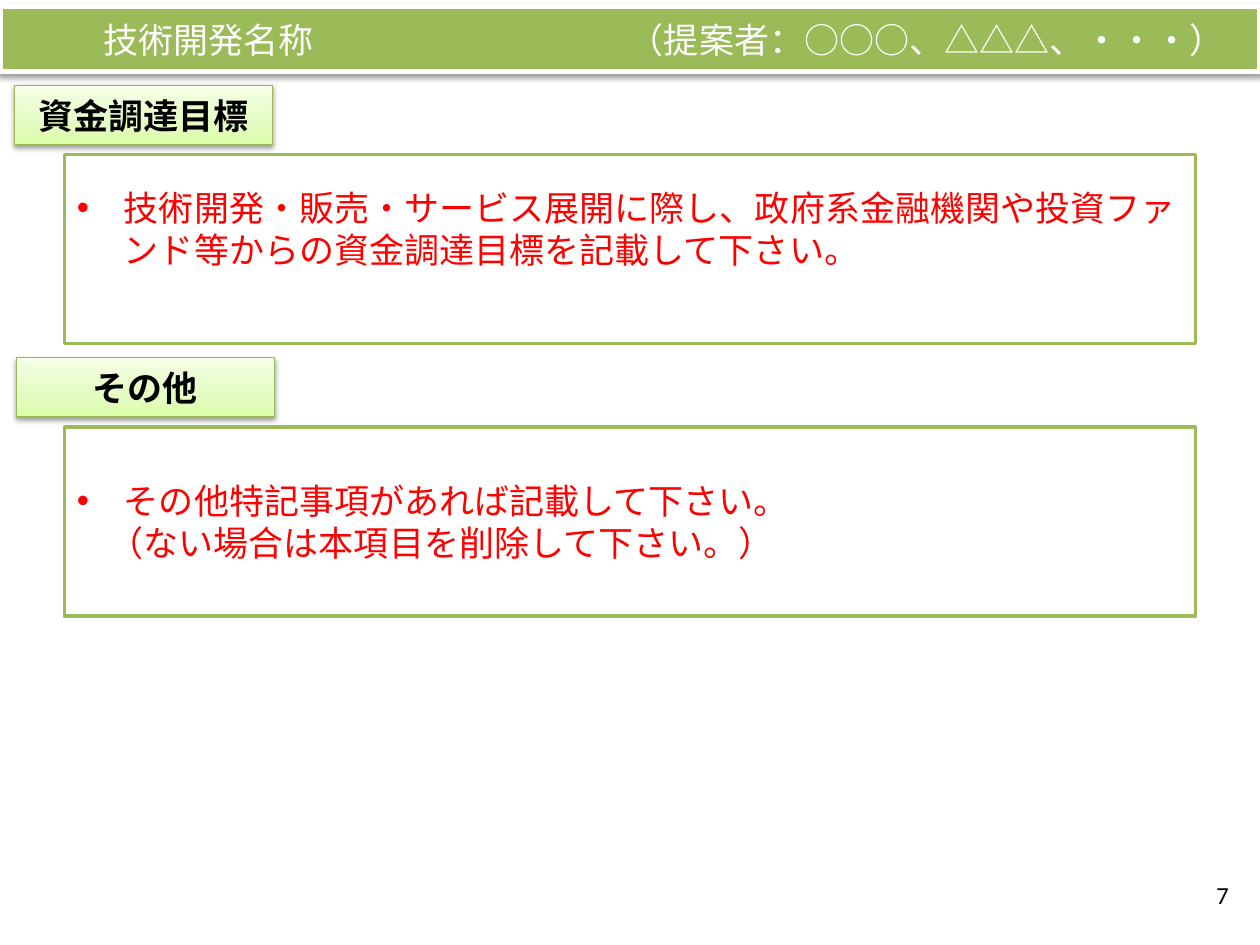
from dataclasses import dataclass

from lxml import etree
from pptx import Presentation
from pptx.dml.color import RGBColor
from pptx.enum.shapes import MSO_SHAPE
from pptx.enum.text import MSO_ANCHOR, PP_ALIGN
from pptx.oxml.ns import qn
from pptx.util import Cm, Pt

RECTANGLE = MSO_SHAPE.RECTANGLE
MIDDLE = MSO_ANCHOR.MIDDLE
LEFT, CENTER, RIGHT = PP_ALIGN.LEFT, PP_ALIGN.CENTER, PP_ALIGN.RIGHT

FONT = "Calibri"
COLORS = {
    "green": "9BBB59",
    "label_line": "98B955",
    "white": "FFFFFF",
    "black": "000000",
    "red": "FF0000",
}
LABEL_GRADIENT = [(0, "DAFDA7"), (35, "E4FCC2"), (100, "F5FFE7")]
BULLET_INDENT = 0.95


@dataclass
class Line:
    text: str
    indent: float = BULLET_INDENT
    bullet: bool = True


@dataclass
class Section:
    title: str
    label_left: float
    top: float
    lines: list[Line]
    bottom_inset: float = 0.13


SECTIONS = [
    Section("資金調達目標", 0.3, 1.72, [
        Line("技術開発・販売・サービス展開に際し、政府系金融機関や投資ファンド等からの"
             "資金調達目標を記載して下さい。"),
    ], bottom_inset=0.98),
    Section("その他", 0.33, 7.21, [
        Line("その他特記事項があれば記載して下さい。"),
        Line("（ない場合は本項目を削除して下さい。）", indent=0.64, bullet=False),
    ]),
]


def rgb(name: str) -> RGBColor:
    return RGBColor.from_string(COLORS[name])


def add_child(parent, tag: str, **attributes: str):
    return etree.SubElement(parent, qn(tag), attributes)


def add_span(para, text: str, color: str, size: int = 20, bold: bool = False) -> None:
    span = para.add_run()
    span.text = text
    span.font.name = FONT
    span.font.size = Pt(size)
    span.font.bold = bold
    span.font.color.rgb = rgb(color)


def add_box(page, left: float, top: float, width: float, height: float,
            line_color: str, line_width: float, fill: str = "white"):
    box = page.shapes.add_shape(RECTANGLE, Cm(left), Cm(top), Cm(width), Cm(height))
    box.shadow.inherit = False
    box.fill.solid()
    box.fill.fore_color.rgb = rgb(fill)
    box.line.color.rgb = rgb(line_color)
    box.line.width = Pt(line_width)
    box.text_frame.word_wrap = True
    box.text_frame.vertical_anchor = MIDDLE
    return box


def add_shadow(box) -> None:
    effects = box._element.spPr.find(qn("a:effectLst"))
    shadow = add_child(effects, "a:outerShdw", blurRad=str(Pt(3.1)), dist=str(Pt(1.6)),
                       dir="5400000", rotWithShape="0")
    color = add_child(shadow, "a:srgbClr", val=COLORS["black"])
    add_child(color, "a:alpha", val="38000")


def set_label_gradient(box) -> None:
    box.fill.gradient()
    box.fill.gradient_angle = 90
    stops = box._element.spPr.find(qn("a:gradFill")).find(qn("a:gsLst"))
    stops.clear()
    for percent, color in LABEL_GRADIENT:
        stop = add_child(stops, "a:gs", pos=str(percent * 1000))
        add_child(stop, "a:srgbClr", val=color)


def set_indent(para, line: Line) -> None:
    properties = para._p.get_or_add_pPr()
    properties.set("marL", str(Cm(line.indent)))
    if line.bullet:
        properties.set("indent", str(-Cm(line.indent)))
        add_child(properties, "a:buFont", typeface="Arial")
        add_child(properties, "a:buChar", char="•")
    else:
        properties.set("indent", "0")


def add_title_bar(page) -> None:
    bar = add_box(page, 0, 0.13, 25.4, 1.32, "white", 3, fill="green")
    add_shadow(bar)
    bar.text_frame.margin_left = Cm(2.08)
    para = bar.text_frame.paragraphs[0]
    para.alignment = LEFT
    # The tab stop places the proposer beside the project name
    tabs = add_child(para._p.get_or_add_pPr(), "a:tabLst")
    add_child(tabs, "a:tab", pos=str(Cm(10.6)), algn="l")
    add_span(para, "技術開発名称", "white")
    add_span(para, "\t（提案者：○○○、△△△、・・・）", "white")


def add_section(page, section: Section) -> None:
    # Heading label
    label = add_box(page, section.label_left, section.top, 5.2, 1.2, "label_line", 0.75)
    set_label_gradient(label)
    add_shadow(label)
    para = label.text_frame.paragraphs[0]
    para.alignment = CENTER
    add_span(para, section.title, "black", bold=True)

    # Framed instructions
    frame = add_box(page, 1.3, section.top + 1.4, 22.8, 3.81, "green", 2)
    text = frame.text_frame
    text.margin_bottom = Cm(section.bottom_inset)
    for index, line in enumerate(section.lines):
        para = text.add_paragraph() if index else text.paragraphs[0]
        para.alignment = LEFT
        set_indent(para, line)
        add_span(para, line.text, "red")


def add_page_number(page, number: str) -> None:
    box = page.shapes.add_textbox(Cm(19.1), Cm(17.53), Cm(5.92), Cm(1.02))
    box.text_frame.word_wrap = True
    box.text_frame.vertical_anchor = MIDDLE
    para = box.text_frame.paragraphs[0]
    para.alignment = RIGHT
    add_span(para, number, "black", size=14)


def main() -> None:
    deck = Presentation()
    deck.slide_width, deck.slide_height = Cm(25.4), Cm(19.05)
    page = deck.slides.add_slide(deck.slide_layouts[6])
    add_title_bar(page)
    for section in SECTIONS:
        add_section(page, section)
    add_page_number(page, "7")
    deck.save("out.pptx")


if __name__ == "__main__":
    main()
